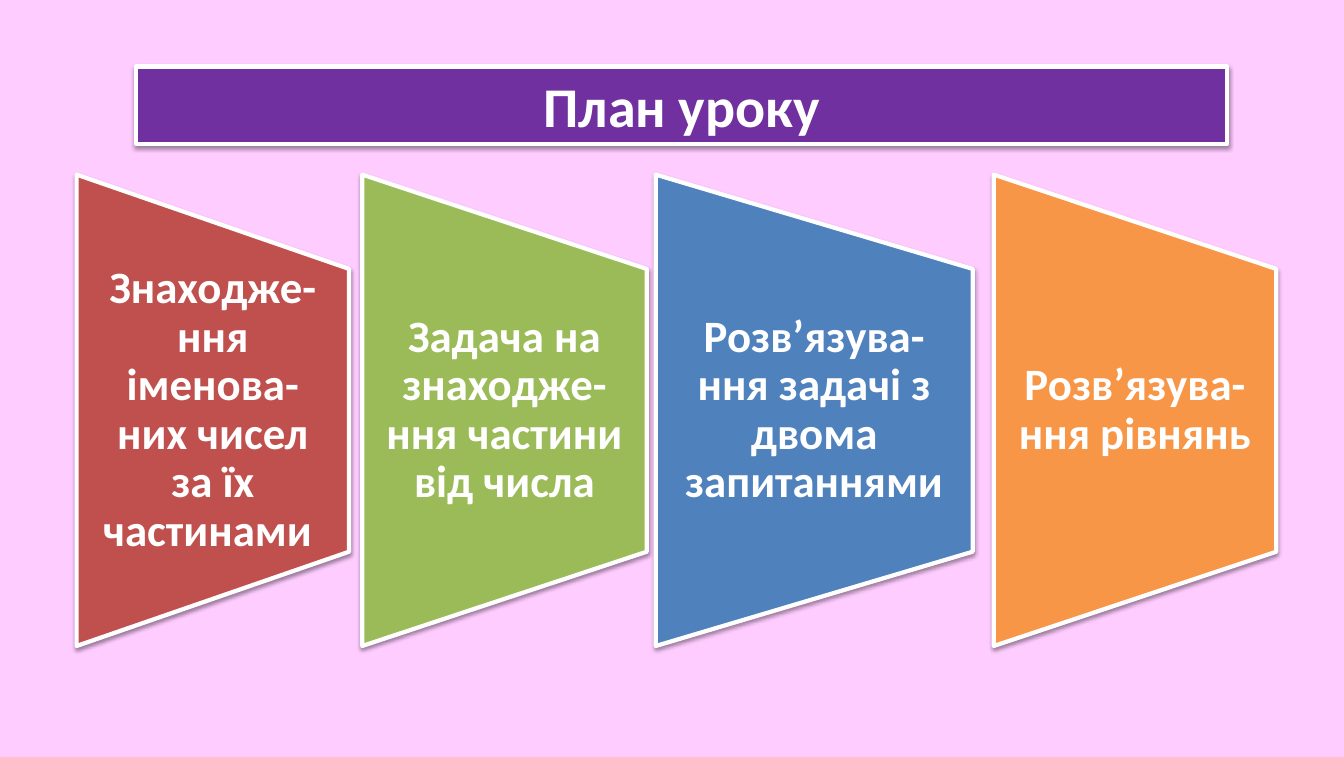
import pptx
import pptx.util
import pptx.dml.color
import pptx.enum.shapes
import pptx.enum.text
import pptx.oxml

Inches = pptx.util.Inches
Pt = pptx.util.Pt
Shape = pptx.enum.shapes.MSO_SHAPE
Anchor = pptx.enum.text.MSO_ANCHOR

SHADOW = (
    '<a:outerShdw xmlns:a="http://schemas.openxmlformats.org/drawingml/2006/main" '
    'blurRad="39370" dist="20320" dir="5400000" rotWithShape="0">'
    '<a:srgbClr val="000000"><a:alpha val="38000"/></a:srgbClr></a:outerShdw>'
)
PANELS = [
    (0.76, 2.7, "C0504D", "Знаходже-ння іменова-них чисел за їх частинами "),
    (3.59, 2.82, "9BBB59", "Задача на знаходже-ння частини від числа"),
    (6.5, 3.14, "4F81BD", "Розв’язува-ння задачі з двома запитаннями"),
    (9.85, 2.8, "F79646", "Розв’язува-ння рівнянь"),
]


def color(code):
    """Turn a hex string into a colour."""
    return pptx.dml.color.RGBColor.from_string(code)


def block(slide, kind, box, fill):
    """Add a filled shape with a white edge and a soft shadow."""
    shape = slide.shapes.add_shape(kind, *map(Inches, box))
    shape.fill.solid()
    shape.fill.fore_color.rgb = color(fill)
    shape.line.color.rgb = color("FFFFFF")
    shape.line.width = Pt(3)
    shape.shadow.inherit = False
    effects = shape._element.spPr.find(pptx.oxml.ns.qn("a:effectLst"))
    effects.append(pptx.oxml.parse_xml(SHADOW))
    return shape


def write(shape, text, size, side, edge):
    """Write centred bold white text with the given insets."""
    frame = shape.text_frame
    frame.word_wrap = True
    frame.vertical_anchor = Anchor.MIDDLE
    frame.margin_left = frame.margin_right = Inches(side)
    frame.margin_top = frame.margin_bottom = Inches(edge)
    line = frame.paragraphs[0]
    line.text = text
    line.alignment = pptx.enum.text.PP_ALIGN.CENTER
    line.font.name = "Calibri"
    line.font.size = Pt(size)
    line.font.bold = True
    line.font.color.rgb = color("FFFFFF")
    return line


def title(slide, box, text):
    """Draw the title bar."""
    bar = block(slide, Shape.RECTANGLE, box, "7030A0")
    write(bar, text, 40, 0.1, 0.05)
    bar.text_frame.vertical_anchor = Anchor.TOP


def panel(slide, box, fill, text):
    """Draw a trapezoid turned on its side, with its label in the middle."""
    left, top, width, height = box
    shift = (height - width) / 2
    turned = (left - shift, top + shift, height, width)
    shape = block(slide, Shape.FLOWCHART_MANUAL_OPERATION, turned, fill)
    shape.rotation = 270
    inner = (left, top + height / 5, width, height * 3 / 5)
    label = slide.shapes.add_textbox(*map(Inches, inner))
    write(label, text, 32, 0.22, 0).line_spacing = 0.9


def main():
    """Build the lesson plan slide."""
    deck = pptx.Presentation()
    deck.slide_width = Inches(13.32)
    deck.slide_height = Inches(7.5)
    slide = deck.slides.add_slide(deck.slide_layouts[6])
    slide.background.fill.solid()
    slide.background.fill.fore_color.rgb = color("FFCCFF")
    title(slide, (1.35, 0.66, 10.81, 0.77), "План уроку")
    for left, width, fill, text in PANELS:
        panel(slide, (left, 1.73, width, 4.67), fill, text)
    deck.save("out.pptx")


if __name__ == "__main__":
    main()
